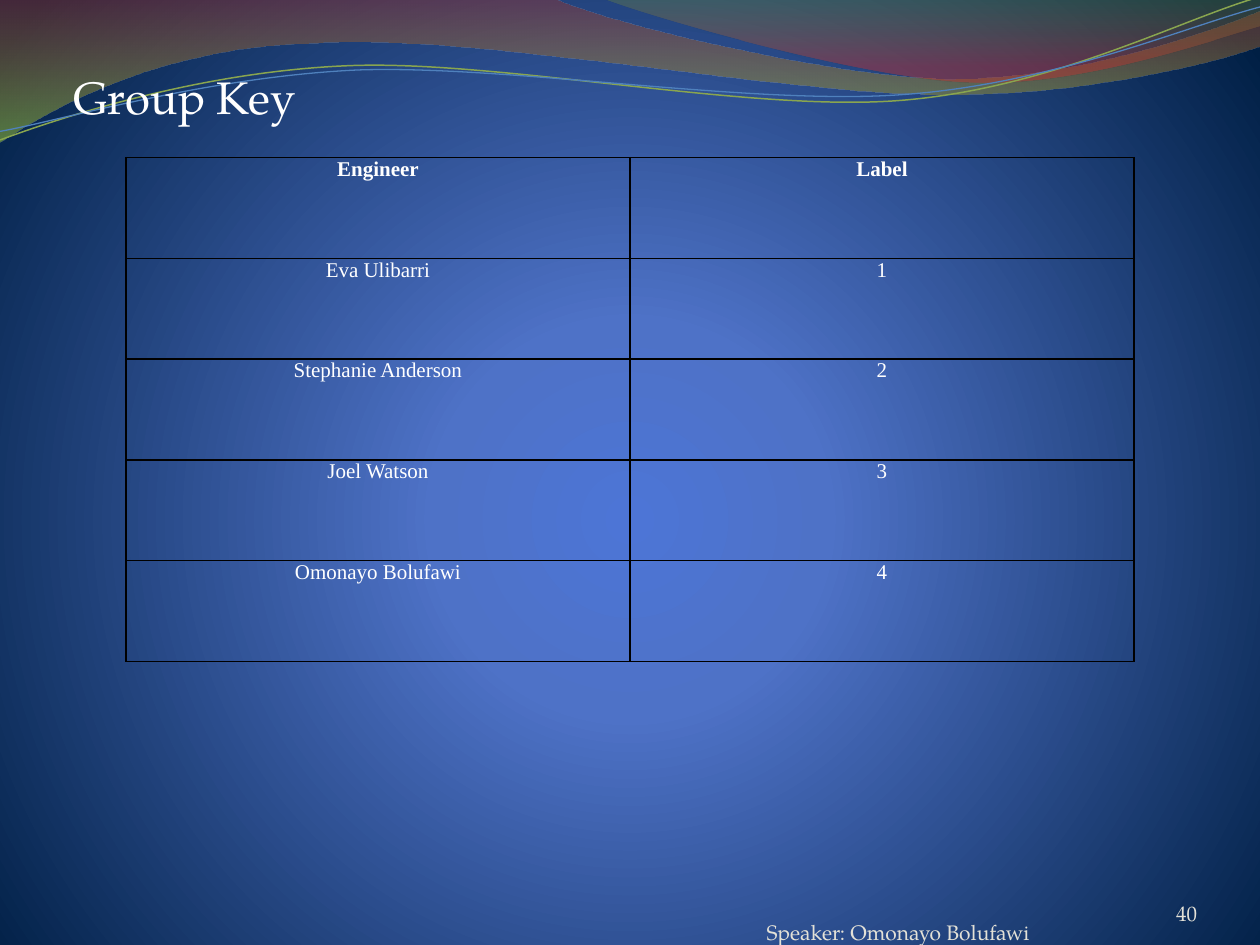
from lxml.etree import SubElement
from pptx import Presentation
from pptx.dml.color import RGBColor
from pptx.enum.text import MSO_ANCHOR as ANCHOR, PP_ALIGN as ALIGN
from pptx.oxml.ns import qn
from pptx.oxml.xmlchemy import OxmlElement
from pptx.util import Pt

COLORS = {
    "white": "FFFFFF", "footer": "E3E1D7", "border": "000000",
    "center": "4D75D6", "middle": "4E72C7", "edge": "001F44",
    "red": "973330", "lime": "95C238", "olive": "769537", "crimson": "BE3330",
    "green_line": "89A54F", "blue_line": "4F81BD",
}
SERIF, TABLE_FONT = "TeX Gyre Pagella", "Times New Roman"
CURVE_TILT = 357.3

WIDE_WAVE = [
    (0, 0), (317, -0.7),
    (343, 12, 478, 45, 546, 45), (614, 45, 690, 19, 720, 6.5), (721, 26),
    (708, 32, 626, 55, 537, 54), (448, 54, 275, 20, 185, 24.5),
    (93, 26, 33, 60, -0.7, 81.5), (0, 0),
]
RIGHT_WAVE = [
    (345, -0.7), (366, 8, 491, 45, 554, 47), (616, 50, 692, 23, 720, 15),
    (720, 0), (345, -0.7),
]
GREEN_CURVE = [
    (-1.4, 63), (34.2, 51.7, 114.3, 29.4, 199.4, 30),
    (284.4, 30.5, 425.9, 67.2, 512.1, 64.7),
    (599.3, 62.3, 676.1, 25.9, 720.6, 15.4),
]
BLUE_CURVE = [
    (-1.1, 58.1), (33.1, 53.7, 118.2, 32.6, 204.3, 32.7),
    (290.3, 33.7, 429.1, 63.8, 515.3, 61.4),
    (601.5, 59.4, 678.9, 30, 721.4, 21),
]
ROWS = [
    ("Engineer", "Label"), ("Eva Ulibarri", "1"), ("Stephanie Anderson", "2"),
    ("Joel Watson", "3"), ("Omonayo Bolufawi", "4"),
]


def rgb(name):
    return RGBColor.from_string(COLORS[name])


def set_gradient(fill, element, stops, center=None):
    fill.gradient()
    grad = next(element.iter(qn("a:gradFill")))
    for child in list(grad):
        grad.remove(child)
    gs_list = SubElement(grad, qn("a:gsLst"))
    for pos, color, opacity in stops:
        gs = SubElement(gs_list, qn("a:gs"), pos=str(pos * 1000))
        clr = SubElement(gs, qn("a:srgbClr"), val=COLORS[color])
        if opacity < 100:
            SubElement(clr, qn("a:alpha"), val=str(opacity * 1000))
    if center:
        circle = SubElement(grad, qn("a:path"), path="circle")
        rect = {side: str(v * 1000) for side, v in zip("ltrb", center)}
        SubElement(circle, qn("a:fillToRect"), **rect)
    else:
        SubElement(grad, qn("a:lin"), ang="5400000", scaled="0")


def add_outline(s, segments, close):
    first, *rest = segments
    builder = s.shapes.build_freeform(*map(Pt, first))
    builder.add_line_segments([tuple(map(Pt, seg[-2:])) for seg in rest], close=close)
    sp = builder.convert_to_shape()
    sp.shadow.inherit = False
    for edge, seg in zip(list(sp._element.iter(qn("a:lnTo"))), rest):
        if len(seg) == 6:
            edge.tag = qn("a:cubicBezTo")
            for i in (0, 1):
                pt = OxmlElement("a:pt")
                pt.set("x", str(Pt(seg[2 * i]) - sp.left))
                pt.set("y", str(Pt(seg[2 * i + 1]) - sp.top))
                edge.insert(i, pt)
    return sp


def add_wave(s, segments, stops):
    sp = add_outline(s, segments, True)
    set_gradient(sp.fill, sp._element, stops)
    sp.line.fill.background()


def add_curve(s, segments, color, width):
    sp = add_outline(s, segments, False)
    sp.rotation = CURVE_TILT
    sp.fill.background()
    sp.line.color.rgb = rgb(color)
    sp.line.width = Pt(width)


def write(tf, text, size=12, font=SERIF, color="white", bold=False,
          align=ALIGN.LEFT, before=0):
    p = tf.paragraphs[0]
    p.alignment = align
    p.space_before = Pt(before)
    r = p.add_run()
    r.text = text
    r.font.size = Pt(size)
    r.font.name = font
    r.font.bold = bold
    r.font.color.rgb = rgb(color)


def add_text(s, text, box, inset=(0, 0, 0, 0), anchor=ANCHOR.BOTTOM, **style):
    tf = s.shapes.add_textbox(*map(Pt, box)).text_frame
    tf.word_wrap = True
    tf.vertical_anchor = anchor
    tf.margin_left, tf.margin_top, tf.margin_right, tf.margin_bottom = map(Pt, inset)
    write(tf, text, **style)


def set_borders(cell):
    tc_pr = cell._tc.get_or_add_tcPr()
    for i, side in enumerate("LRTB"):
        ln = OxmlElement(f"a:ln{side}")
        ln.set("w", str(Pt(1)))
        fill = SubElement(ln, qn("a:solidFill"))
        SubElement(fill, qn("a:srgbClr"), val=COLORS["border"])
        tc_pr.insert(i, ln)


def add_key_table(s, rows, box):
    table = s.shapes.add_table(len(rows), len(rows[0]), *map(Pt, box)).table
    table.first_row = table.horz_banding = False
    for i, row in enumerate(rows):
        for j, text in enumerate(row):
            cell = table.cell(i, j)
            cell.margin_left = cell.margin_right = Pt(5)
            cell.margin_top = cell.margin_bottom = Pt(0)
            cell.fill.background()
            set_borders(cell)
            write(cell.text_frame, text, font=TABLE_FONT, bold=i == 0,
                  align=ALIGN.CENTER)


def main():
    prs = Presentation()
    prs.slide_width, prs.slide_height = Pt(720), Pt(540)
    s = prs.slides.add_slide(prs.slide_layouts[6])
    set_gradient(s.background.fill, s._element,
                 [(0, "center", 100), (25, "middle", 100), (100, "edge", 100)],
                 center=(10, 110, 10, 100))
    add_wave(s, WIDE_WAVE, [(0, "red", 45), (100, "lime", 55)])
    add_wave(s, RIGHT_WAVE, [(0, "olive", 30), (80, "crimson", 45)])
    add_curve(s, GREEN_CURVE, "green_line", 0.85)
    add_curve(s, BLUE_CURVE, "blue_line", 0.75)
    add_text(s, "Group Key", (41.8, 36, 618.5, 462), inset=(0, 3.6, 1.4, 3.6),
             anchor=ANCHOR.TOP, size=26, before=5.2)
    add_text(s, "Speaker: Omonayo Bolufawi", (438, 511, 264, 29), color="footer")
    add_text(s, "40", (624, 500, 60, 28.8), color="footer", align=ALIGN.RIGHT)
    add_key_table(s, ROWS, (72, 90, 576, 288))
    prs.save("out.pptx")


if __name__ == "__main__":
    main()
